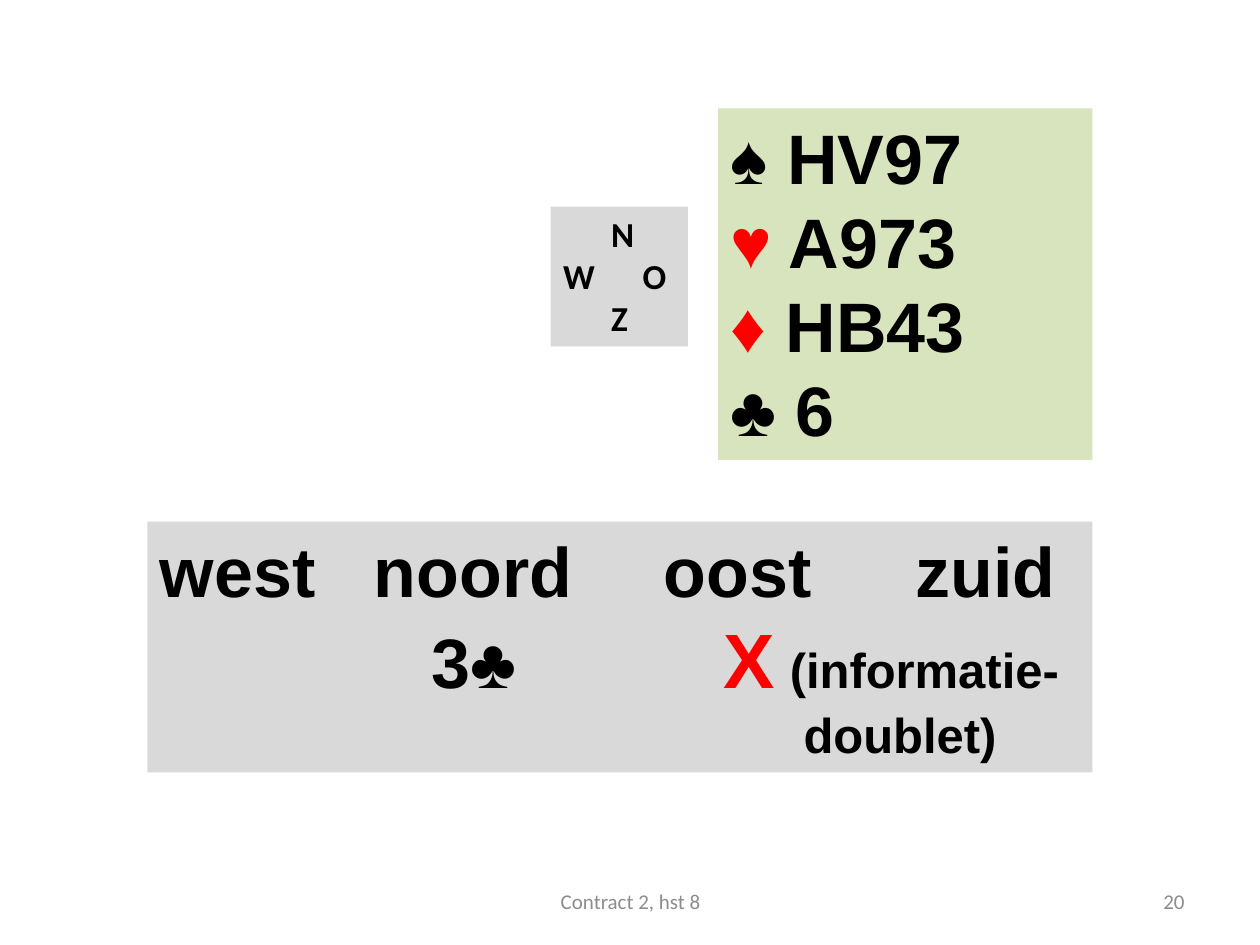
from lxml import etree
from pptx import Presentation
from pptx.dml.color import RGBColor
from pptx.enum.shapes import MSO_SHAPE
from pptx.enum.text import MSO_ANCHOR, MSO_AUTO_SIZE, PP_ALIGN
from pptx.oxml.ns import qn
from pptx.util import Inches, Pt

RECT = MSO_SHAPE.RECTANGLE
TOP, MIDDLE = MSO_ANCHOR.TOP, MSO_ANCHOR.MIDDLE
LEFT, CENTER, RIGHT = PP_ALIGN.LEFT, PP_ALIGN.CENTER, PP_ALIGN.RIGHT
GROW = MSO_AUTO_SIZE.SHAPE_TO_FIT_TEXT

BLACK = RGBColor(0, 0, 0)
RED = RGBColor(0xFF, 0, 0)
GRAY = RGBColor(0xD9, 0xD9, 0xD9)
GREEN = RGBColor(0xD7, 0xE4, 0xBD)
MUTED = RGBColor(0x8C, 0x8C, 0x8C)


def add_panel(slide, box, fill):
    """Add a plain filled box and return its text frame."""
    panel = slide.shapes.add_shape(RECT, *map(Inches, box))
    panel.shadow.inherit = False
    panel.fill.solid()
    panel.fill.fore_color.rgb = fill
    panel.line.fill.background()
    frame = panel.text_frame
    frame.word_wrap = True
    frame.vertical_anchor = TOP
    frame.auto_size = GROW
    return frame


def add_run(para, text, font, size, color=BLACK, bold=True):
    run = para.add_run()
    run.text = text
    run.font.name = font
    run.font.size = Pt(size)
    run.font.bold = bold
    run.font.color.rgb = color


def add_line(frame, index, stops=()):
    """Return the left-aligned line at index, with tab stops in inches."""
    para = frame.paragraphs[0] if index == 0 else frame.add_paragraph()
    para.alignment = LEFT
    if stops:
        tabs = etree.SubElement(para._p.get_or_add_pPr(), qn("a:tabLst"))
        for stop in stops:
            etree.SubElement(tabs, qn("a:tab"), pos=str(Inches(stop)), algn="l")
    return para


def add_compass(slide, box):
    frame = add_panel(slide, box, GRAY)
    mid, east = box[2] * 0.35, box[2] * 0.58
    rows = [("\tN", mid), ("W\tO", east), ("\tZ", mid)]
    for i, (text, stop) in enumerate(rows):
        add_run(add_line(frame, i, [stop]), text, "Calibri", 20)


def add_hand(slide, box, hand):
    frame = add_panel(slide, box, GREEN)
    for i, (suit, cards) in enumerate(hand):
        para = add_line(frame, i)
        add_run(para, suit, "Arial", 40, RED if suit in "♥♦" else BLACK)
        add_run(para, " " + cards, "Arial", 40)


def add_bids(slide, box):
    frame = add_panel(slide, box, GRAY)
    # Each row: its tab stops, then runs of text, size and colour
    rows = [
        ([1.7, 4, 6], [("west\tnoord\toost\tzuid", 40, BLACK)]),
        ([2.16, 4.47, 5], [("\t3♣\t", 40, BLACK), ("X", 44, RED),
                           ("\t(informatie-", 28, BLACK)]),
        ([5.11], [("\tdoublet)", 28, BLACK)]),
    ]
    for i, (stops, runs) in enumerate(rows):
        para = add_line(frame, i, stops)
        for text, size, color in runs:
            add_run(para, text, "Arial", size, color)


def add_note(slide, box, text, align):
    frame = slide.shapes.add_textbox(*map(Inches, box)).text_frame
    frame.word_wrap = True
    frame.vertical_anchor = MIDDLE
    para = frame.paragraphs[0]
    para.alignment = align
    add_run(para, text, "Calibri", 12, MUTED, False)


def main():
    deck = Presentation()
    deck.slide_width, deck.slide_height = Inches(10), Inches(7.5)
    slide = deck.slides.add_slide(deck.slide_layouts[6])

    # Compass, hand and bidding
    add_compass(slide, (4.37, 1.64, 1.09, 1.11))
    add_bids(slide, (1.17, 4.14, 7.5, 1.99))
    hand = [("♠", "HV97"), ("♥", "A973"), ("♦", "HB43"), ("♣", "6")]
    add_hand(slide, (5.7, 0.86, 2.97, 2.79), hand)

    # Footer
    add_note(slide, (7.17, 6.95, 2.33, 0.4), "20", RIGHT)
    add_note(slide, (3.42, 6.95, 3.17, 0.4), "Contract 2, hst 8", CENTER)
    deck.save("out.pptx")


if __name__ == "__main__":
    main()
